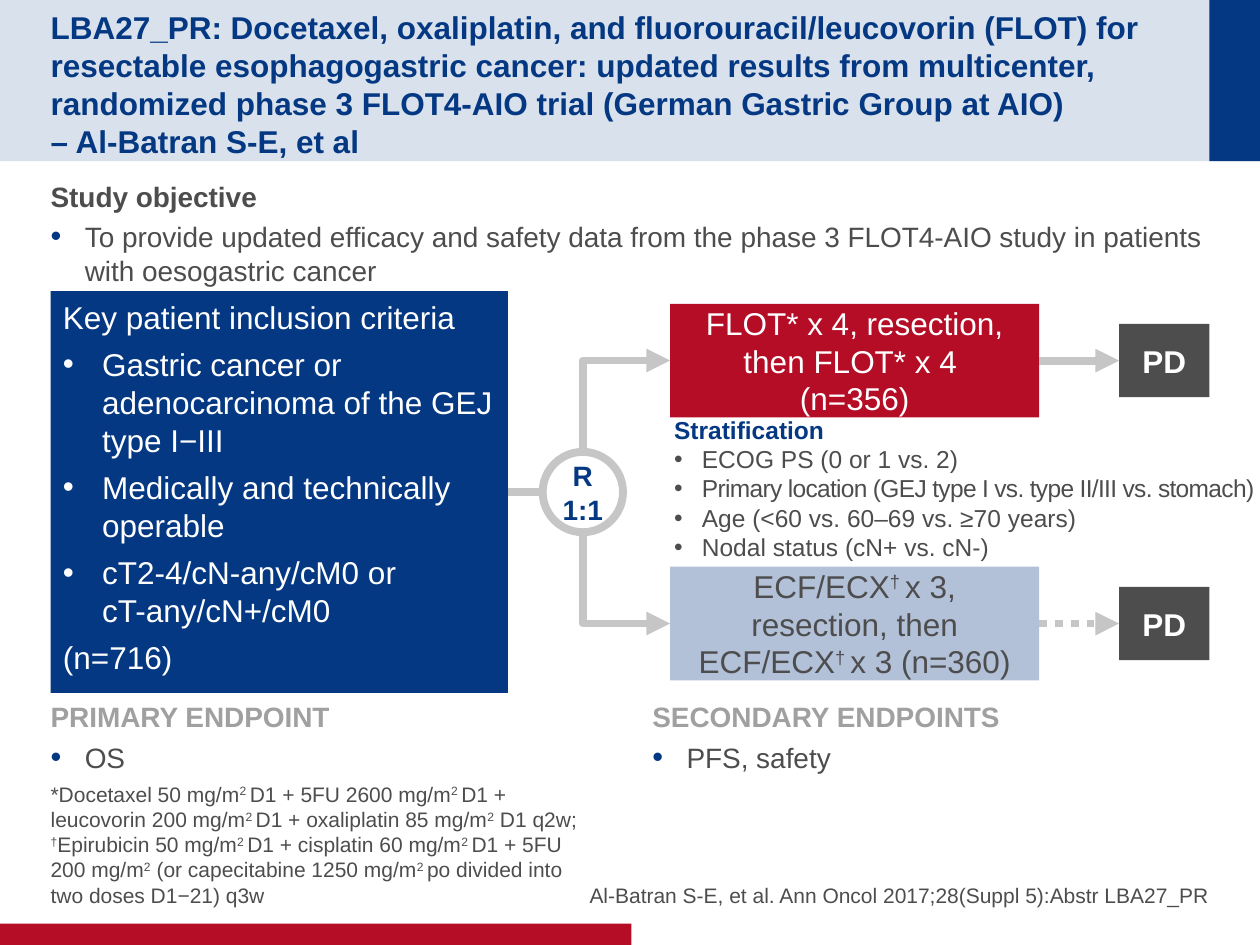
from lxml.etree import SubElement
from pptx import Presentation
from pptx.dml.color import RGBColor
from pptx.enum.dml import MSO_LINE
from pptx.enum.shapes import MSO_CONNECTOR, MSO_SHAPE
from pptx.enum.text import MSO_ANCHOR, MSO_AUTO_SIZE, PP_ALIGN
from pptx.oxml.ns import qn
from pptx.util import Cm, Pt

HUES = {"navy": "043882", "pale": "D9E1EC", "red": "B60D27", "steel": "B2C0D8",
        "dark": "4D4D4D", "grey": "A0A0A0", "line": "C6C6C6", "white": "FFFFFF"}

TITLE = ("LBA27_PR: Docetaxel, oxaliplatin, and fluorouracil/leucovorin (FLOT) for "
         "resectable esophagogastric cancer: updated results from multicenter, randomized "
         "phase 3 FLOT4-AIO trial (German Gastric Group at AIO) \v– Al-Batran S-E, et al")
AIM = ["Study objective",
       "•To provide updated efficacy and safety data from the phase 3 FLOT4-AIO study "
       "in patients with oesogastric cancer"]
CRIT = ["Key patient inclusion criteria",
        "•Gastric cancer or adenocarcinoma of the GEJ type I−III",
        "•Medically and technically operable",
        "•cT2-4/cN-any/cM0 or \vcT-any/cN+/cM0",
        "(n=716)"]
STRATA = ["Stratification",
          "•ECOG PS (0 or 1 vs. 2)",
          "•Primary location (GEJ type I vs. type II/III vs. stomach)",
          "•Age (<60 vs. 60–69 vs. ≥70 years)",
          "•Nodal status (cN+ vs. cN-)"]
ENDS = [(1, 1.02, 0, ["PRIMARY ENDPOINT", "•OS"]),
        (3, 12.9, 0.25, ["SECONDARY ENDPOINTS", "•PFS, safety"])]
NOTE = ("*Docetaxel 50 mg/m^2 ^D1 + 5FU 2600 mg/m^2 ^D1 + leucovorin 200 mg/m^2 ^D1 + "
        "oxaliplatin 85 mg/m^2^ D1 q2w; ^†^Epirubicin 50 mg/m^2 ^D1 + cisplatin 60 mg/m^2 ^D1 + "
        "5FU 200 mg/m^2^ (or capecitabine 1250 mg/m^2 ^po divided into two doses D1−21) q3w")
CITE = "Al-Batran S-E, et al. Ann Oncol 2017;28(Suppl 5):Abstr LBA27_PR"
ARMS = [(-1, "red", "white", None, ["FLOT* x 4, resection, then FLOT* x 4 ", "(n=356)"]),
        (1, "steel", "dark", MSO_LINE.ROUND_DOT,
         ["ECF/ECX^† ^x 3, resection, then ECF/ECX^† ^x 3 (n=360)"])]
BANDS = [(0, 0, 25.4, 3.25, "pale"), (24.38, 0, 1.02, 3.25, "navy"),
         (0, 18.62, 12.73, 0.43, "red")]

LEFT, MID, STEP = 1.02, 9.92, 2.65
HUB, RAD = 11.75, 0.81
ARM = (13.51, 7.44, 2.29)
END = (22.56, 1.82, 1.48)


def tint(name):
    return RGBColor.from_string(HUES[name])


def place(shape, *box):
    shape.left, shape.top, shape.width, shape.height = map(Cm, box)
    return shape


def write(shape, rows, size, hue, head=None, bold=False, align=PP_ALIGN.LEFT,
          anchor=MSO_ANCHOR.TOP, pad=(0, 0), dent=0.69, after=0, dot=None, wrap=True):
    frame = shape.text_frame
    frame.auto_size, frame.word_wrap = MSO_AUTO_SIZE.NONE, wrap
    frame.vertical_anchor = anchor
    frame.margin_left = frame.margin_right = Cm(pad[0])
    frame.margin_top = frame.margin_bottom = Cm(pad[1])
    frame.text = "\n".join(rows)
    for rank, para in enumerate(frame.paragraphs):
        item = para.text.startswith("•")
        parts = para.text.removeprefix("•").split("^")
        para.text = parts[0]
        for part in parts[1:]:
            para.add_run().text = part
        para.alignment, para.line_spacing = align, 1.0
        para.space_before, para.space_after = Pt(0), Pt(after)
        mark(para, dent if item else 0, dot)
        top = head and rank == 0
        for run in para.runs:
            font = run.font
            font.name, font.size, font.bold = "Arial", Pt(size), bool(bold or top)
            font.color.rgb = tint(head if top else hue)
        for run in para.runs[1::2] if len(parts) > 1 else []:
            run.font._element.set("baseline", "30000")


def mark(para, dent, dot):
    props = para._p.get_or_add_pPr()
    props.set("marL", str(Cm(dent)))
    props.set("indent", str(-Cm(dent)))
    if not dent:
        SubElement(props, qn("a:buNone"))
        return
    if dot:
        SubElement(SubElement(props, qn("a:buClr")), qn("a:srgbClr"), val=HUES[dot])
        SubElement(props, qn("a:buSzPct"), val="110000")
    SubElement(props, qn("a:buFont"), typeface="Arial")
    SubElement(props, qn("a:buChar"), char="•")


def block(slide, box, fill, kind=MSO_SHAPE.RECTANGLE):
    shape = slide.shapes.add_shape(kind, *map(Cm, box))
    shape.shadow.inherit = False
    shape.line.fill.background()
    if fill:
        shape.fill.solid()
        shape.fill.fore_color.rgb = tint(fill)
    else:
        shape.fill.background()
    return shape


def link(slide, ends, kind=MSO_CONNECTOR.STRAIGHT, dash=None, arrow=True):
    wire = slide.shapes.add_connector(kind, *map(Cm, ends))
    wire.line.color.rgb, wire.line.width = tint("line"), Pt(4.5)
    if dash:
        wire.line.dash_style = dash
    props = wire._element.spPr
    if arrow:
        SubElement(props.find(qn("a:ln")), qn("a:tailEnd"), type="triangle")
    SubElement(props, qn("a:effectLst"))
    return wire


def bend(slide, side):
    """Draw the elbow from the hub up (-1) or down (1) to its arm."""
    long, wide = STEP - RAD, ARM[0] - HUB
    x, y = HUB + wide / 2, MID + side * (RAD + long / 2)
    ends = (x - long / 2, y - wide / 2, x + long / 2, y + wide / 2)
    props = link(slide, ends, MSO_CONNECTOR.ELBOW)._element.spPr
    props.find(qn("a:prstGeom")).set("prst", "bentConnector2")
    form = props.find(qn("a:xfrm"))
    form.set("rot", "5400000" if side < 0 else "16200000")
    form.set("flipH", "1")
    form.set("flipV", "1" if side < 0 else "0")


def main():
    deck = Presentation()
    deck.slide_width, deck.slide_height = Cm(25.4), Cm(19.05)
    slide = deck.slides.add_slide(deck.slide_layouts[4])
    title, holds = slide.shapes.title, slide.placeholders
    for *box, hue in BANDS:
        title._element.addprevious(block(slide, box, hue)._element)

    write(place(title, LEFT, 0.57, 22.89, 2.24), [TITLE], 18, "navy", bold=True,
          anchor=MSO_ANCHOR.MIDDLE)
    write(place(holds[2], LEFT, 3.48, 23.37, 2.06), AIM, 16, "dark", "dark",
          pad=(0, 0.13), after=4, dot="navy")
    for key, x, pad, rows in ENDS:
        write(place(holds[key], x, 13.97, 11.48, 2.21), rows, 16, "dark", "grey",
              pad=(pad, 0.13), after=4, dot="navy")
    write(place(holds[4], LEFT, 16.94, 10.74, 1.35), [NOTE], 12, "dark",
          anchor=MSO_ANCHOR.BOTTOM)
    cite = slide.shapes.add_textbox(*map(Cm, (11.81, 16.94, 12.57, 1.35)))
    write(cite, [CITE], 12, "dark", align=PP_ALIGN.RIGHT, anchor=MSO_ANCHOR.BOTTOM)

    mid = {"align": PP_ALIGN.CENTER, "anchor": MSO_ANCHOR.MIDDLE}
    crit = block(slide, (LEFT, MID - 4.05, 9.22, 8.1), "navy")
    write(crit, CRIT, 18, "white", pad=(0.25, 0.13), dent=0.79, after=5.5)
    link(slide, (10.24, MID, HUB - RAD, MID), arrow=False).begin_connect(crit, 3)
    hub = block(slide, (HUB - RAD, MID - RAD, 2 * RAD, 2 * RAD), None, MSO_SHAPE.OVAL)
    hub.line.color.rgb, hub.line.width = tint("line"), Pt(4.5)
    write(hub, ["R", "1:1"], 16, "navy", bold=True, wrap=False, **mid)

    for side, fill, hue, dash, rows in ARMS:
        y = MID + side * STEP
        arm, end = (block(slide, (x, y - high / 2, wide, high), tone)
                    for (x, wide, high), tone in ((ARM, fill), (END, "dark")))
        write(arm, rows, 18, hue, pad=(0.25, 0), **mid)
        write(end, ["PD"], 18, "white", bold=True, pad=(0.25, 0), **mid)
        wire = link(slide, (ARM[0] + ARM[1], y, END[0], y), dash=dash)
        wire.begin_connect(arm, 3)
        wire.end_connect(end, 1)
        bend(slide, side)

    strata = slide.shapes.add_textbox(*map(Cm, (13.34, 8.23, 12.29, 2.36)))
    write(strata, STRATA, 14, "dark", "navy", pad=(0.25, 0.13), dent=0.56)
    strata.text_frame.paragraphs[2].runs[0].font._element.set("spc", "-40")
    deck.save("out.pptx")


if __name__ == "__main__":
    main()
